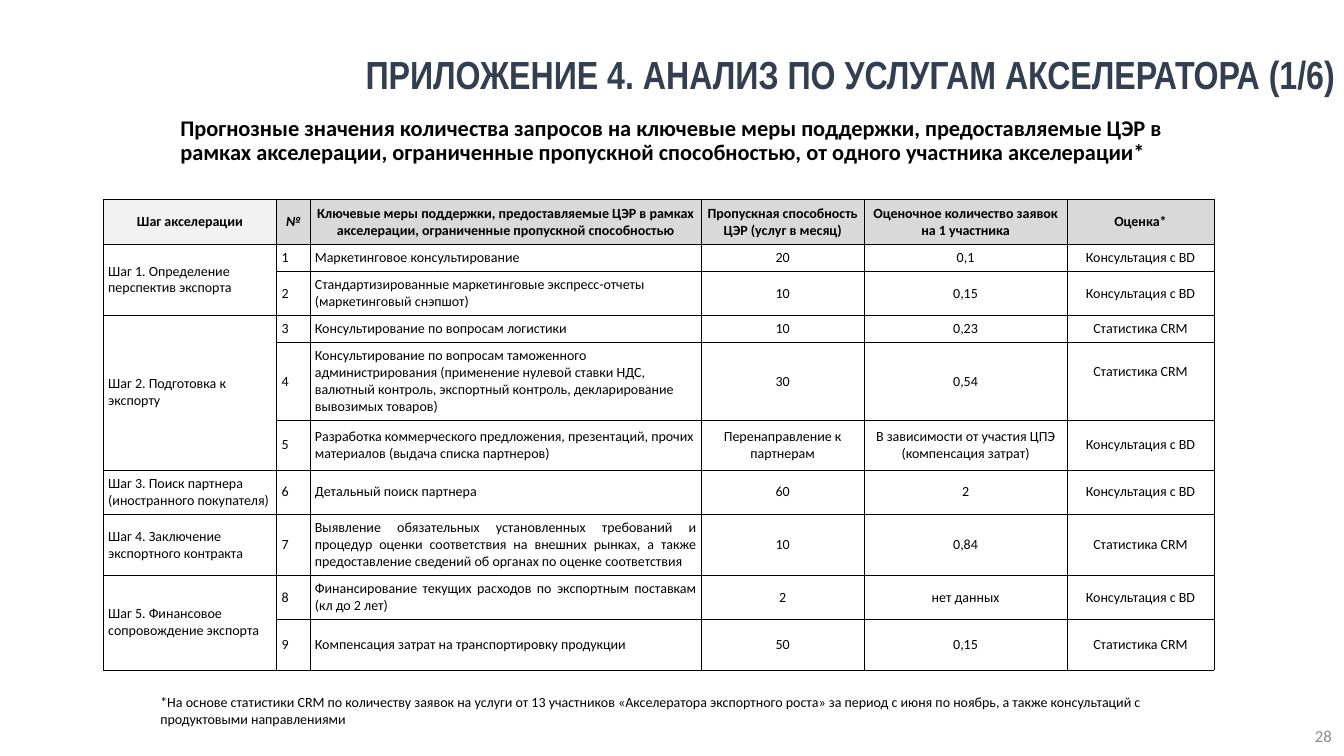
from lxml import etree
from pptx import Presentation
from pptx import util as u
from pptx.dml.color import RGBColor
from pptx.enum import text
from pptx.oxml import ns

ALIGN = {"l": text.PP_ALIGN.LEFT, "c": text.PP_ALIGN.CENTER,
         "r": text.PP_ALIGN.RIGHT, "j": text.PP_ALIGN.JUSTIFY}
MIDDLE = text.MSO_ANCHOR.MIDDLE
TOP = text.MSO_ANCHOR.TOP


def color(hex_value):
    return RGBColor.from_string(hex_value)


class SlideBuilder:
    """Holds the style and the slide; lengths are percent of the slide's size."""

    base = {"name": "Calibri", "size": 10, "bold": False, "italic": False}
    ink = "000000"
    cell_margin = 0.05

    def __init__(self, presentation):
        self.width = presentation.slide_width
        self.height = presentation.slide_height
        self.slide = presentation.slides.add_slide(presentation.slide_layouts[6])

    def across(self, share):
        return u.Emu(round(self.width * share / 100))

    def down(self, share):
        return u.Emu(round(self.height * share / 100))

    def add_words(self, frame, words, align="l", ink=None, spacing=1.0, **style):
        paragraph = frame.paragraphs[0]
        paragraph.alignment = ALIGN[align]
        paragraph.line_spacing = spacing
        run = paragraph.add_run()
        run.text = words
        for name, value in {**self.base, **style}.items():
            setattr(run.font, name, u.Pt(value) if name == "size" else value)
        run.font.color.rgb = color(ink or self.ink)

    def text_box(self, place, words, anchor=TOP, margins=None, **style):
        left, top, width, height = place
        shape = self.slide.shapes.add_textbox(
            self.across(left), self.down(top), self.across(width), self.down(height))
        frame = shape.text_frame
        frame.word_wrap = True
        frame.vertical_anchor = anchor
        for side, inches in (margins or {}).items():
            setattr(frame, f"margin_{side}", u.Inches(inches))
        self.add_words(frame, words, **style)

    def table(self, left, top, columns, rows):
        shape = self.slide.shapes.add_table(
            len(rows), len(columns), self.across(left), self.down(top),
            self.across(sum(columns)), self.down(sum(rows)))
        table = shape.table
        table.first_row = table.horz_banding = False
        for column, share in zip(table.columns, columns):
            column.width = self.across(share)
        for row, share in zip(table.rows, rows):
            row.height = self.down(share)
        for cell in table.iter_cells():
            self.border(cell)
            cell.fill.background()
        return table

    def border(self, cell, points=0.5):
        properties = cell._tc.get_or_add_tcPr()
        for side in ("lnL", "lnR", "lnT", "lnB"):
            line = etree.SubElement(properties, ns.qn(f"a:{side}"), w=str(u.Pt(points)))
            fill = etree.SubElement(line, ns.qn("a:solidFill"))
            etree.SubElement(fill, ns.qn("a:srgbClr"), val=self.ink)

    def cell(self, cell, words, fill=None, **style):
        cell.vertical_anchor = MIDDLE
        for side in ("left", "right", "top", "bottom"):
            setattr(cell, f"margin_{side}", u.Inches(self.cell_margin))
        if fill:
            cell.fill.solid()
            cell.fill.fore_color.rgb = color(fill)
        self.add_words(cell.text_frame, words, **style)


# Table content
HEADERS = ["Шаг акселерации", "№",
           "Ключевые меры поддержки, предоставляемые ЦЭР в рамках акселерации, "
           "ограниченные пропускной способностью",
           "Пропускная способность ЦЭР (услуг в месяц)",
           "Оценочное количество заявок на 1 участника", "Оценка*"]
BD, CRM = "Консультация с BD", "Статистика CRM"
# Each step: name, then measures as (name, alignment, capacity, requests, source)
STEPS = [
    ("Шаг 1. Определение перспектив экспорта", [
        ("Маркетинговое консультирование", "l", "20", "0,1", BD),
        ("Стандартизированные маркетинговые экспресс-отчеты (маркетинговый снэпшот)",
         "l", "10", "0,15", BD)]),
    ("Шаг 2. Подготовка к экспорту", [
        ("Консультирование по вопросам логистики", "l", "10", "0,23", CRM),
        ("Консультирование по вопросам таможенного администрирования (применение "
         "нулевой ставки НДС, валютный контроль, экспортный контроль, "
         "декларирование вывозимых товаров)", "l", "30", "0,54", CRM),
        ("Разработка коммерческого предложения, презентаций, прочих материалов "
         "(выдача списка партнеров)", "l", "Перенаправление к партнерам",
         "В зависимости от участия ЦПЭ (компенсация затрат)", BD)]),
    ("Шаг 3. Поиск партнера (иностранного покупателя)", [
        ("Детальный поиск партнера", "j", "60", "2", BD)]),
    ("Шаг 4. Заключение экспортного контракта", [
        ("Выявление обязательных установленных требований и процедур оценки "
         "соответствия на внешних рынках, а также предоставление сведений об "
         "органах по оценке соответствия", "j", "10", "0,84", CRM)]),
    ("Шаг 5. Финансовое сопровождение экспорта", [
        ("Финансирование текущих расходов по экспортным поставкам (кл до 2 лет)",
         "j", "2", "нет данных", BD),
        ("Компенсация затрат на транспортировку продукции", "l", "50", "0,15", CRM)]),
]
COLUMNS = [12.9, 2.48, 29.1, 12.15, 15.08, 10.95]
ROWS = [5.87, 3.6, 5.87, 3.6, 10.3, 6.53, 5.87, 8.1, 5.8, 6.7]


def fill_table(builder, table):
    for index, words in enumerate(HEADERS):
        builder.cell(table.cell(0, index), words, align="c", bold=True,
                     italic=words == "№", fill="D9D9D9" if index else "F2F2F2")
    row = 1
    for step, measures in STEPS:
        if len(measures) > 1:
            table.cell(row, 0).merge(table.cell(row + len(measures) - 1, 0))
        builder.cell(table.cell(row, 0), step)
        for measure, align, *values in measures:
            builder.cell(table.cell(row, 1), str(row))
            builder.cell(table.cell(row, 2), measure, align=align)
            for column, value in enumerate(values, start=3):
                builder.cell(table.cell(row, column), value, align="c")
            row += 1
    # The source of measure 4 sits a little above the middle
    table.cell(4, 5).margin_bottom = u.Inches(0.25)


def main():
    presentation = Presentation()
    presentation.slide_width = u.Inches(13.33)
    presentation.slide_height = u.Inches(7.5)
    builder = SlideBuilder(presentation)

    # Title and subtitle
    builder.text_box((26.4, 6.27, 73.65, 12.67),
                     "ПРИЛОЖЕНИЕ 4. АНАЛИЗ ПО УСЛУГАМ АКСЕЛЕРАТОРА (1/6)",
                     margins={"top": 0.08, "left": 0}, align="r", spacing=0.9,
                     name="Arial Narrow", size=28, bold=True, ink="333F50")
    builder.text_box((12.68, 14.8, 75.6, 6.93),
                     "Прогнозные значения количества запросов на ключевые меры "
                     "поддержки, предоставляемые ЦЭР в рамках акселерации, "
                     "ограниченные пропускной способностью, от одного участника "
                     "акселерации*", spacing=0.9, size=16, bold=True)

    # Support measures
    fill_table(builder, builder.table(7.68, 26.4, COLUMNS, ROWS))

    # Footnote and page number
    builder.text_box((11.93, 91.07, 75.6, 6.13),
                     "*На основе статистики CRM по количеству заявок на услуги от 13 "
                     "участников «Акселератора экспортного роста» за период с июня по "
                     "ноябрь, а также консультаций с продуктовыми направлениями",
                     margins={"left": 0})
    builder.text_box((77.34, 94.67, 22.5, 5.33), "28", anchor=MIDDLE,
                     align="r", size=12, ink="8C8C8C")

    presentation.save("out.pptx")


if __name__ == "__main__":
    main()
